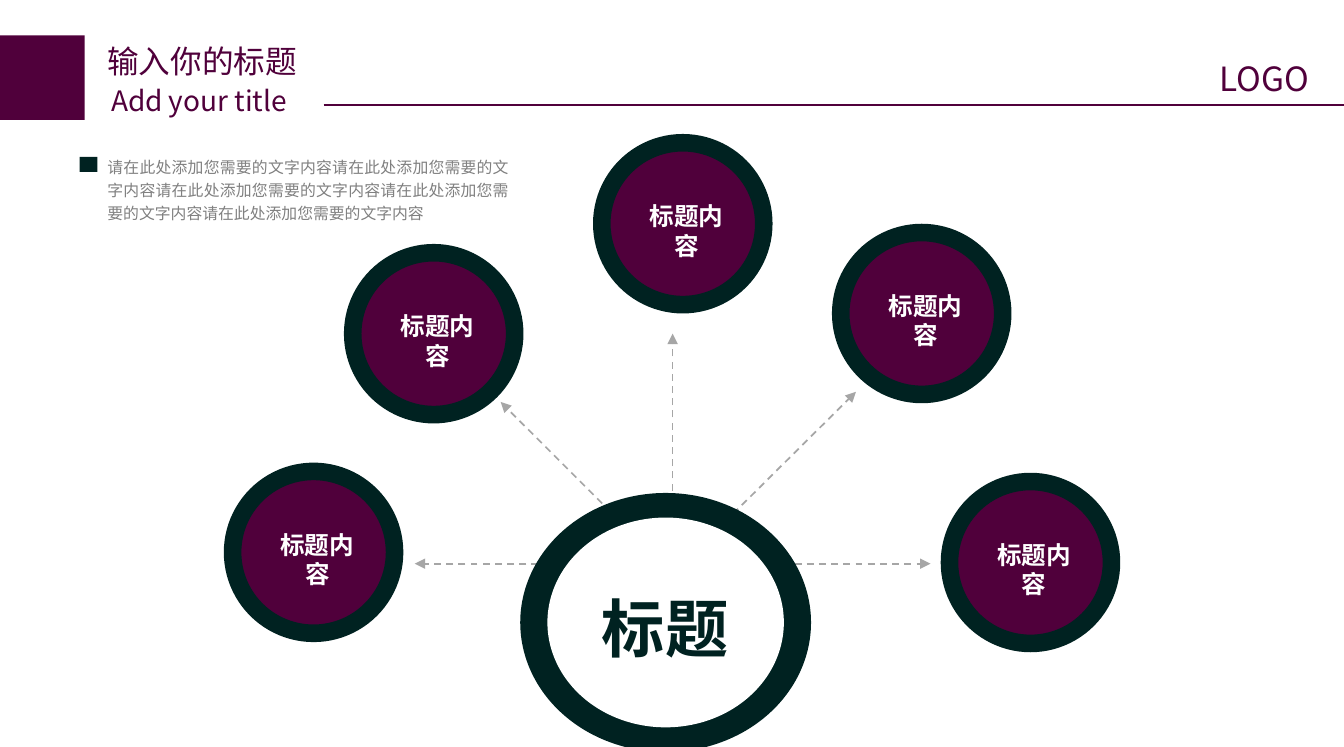
"""Builds a title slide with a hub whose arrows fan out to five ringed topics."""
from lxml.etree import SubElement
from pptx import Presentation
from pptx.dml.color import RGBColor
from pptx.enum.dml import MSO_LINE
from pptx.enum.shapes import MSO_CONNECTOR, MSO_SHAPE
from pptx.enum.text import MSO_AUTO_SIZE, PP_ALIGN
from pptx.oxml.ns import qn
from pptx.util import Inches, Pt

COLORS = {"plum": "50003B", "pine": "002221", "white": "FFFFFF",
          "arrow": "A6A6A6", "body": "808080"}
HEADING_FONT = "Noto Sans CJK SC"
BODY_FONT = "Arial"
WIDTH, HEIGHT = Inches(10.63), Inches(5.91)
COLUMNS, ROWS = 106.3, 59.1
RING_SIZE, RING_BAND = 14.2, 1.39
HUB_CENTER = (52.65, 49.25)
TOPICS = [(17.7, 36.6), (27.2, 19.3), (46.9, 10.6), (65.8, 17.7), (74.4, 37.4)]
ARROWS = [((53.2, 44.6), (32.8, 44.6)), ((53.2, 44.6), (73.6, 44.6)),
          ((53.2, 44.6), (53.2, 26.4)), ((52.4, 44.6), (39.6, 31.8)),
          ((53.2, 45.4), (67.7, 31))]
INTRO = "请在此处添加您需要的文字内容" * 5


def color(key):
    return RGBColor.from_string(COLORS[key])


def place(*cells):
    """Turn alternating column and row counts into slide lengths."""
    steps = (WIDTH / COLUMNS, HEIGHT / ROWS)
    return [round(cell * steps[index % 2]) for index, cell in enumerate(cells)]


def add_solid(slide, kind, box, fill):
    solid = slide.shapes.add_shape(kind, *place(*box))
    solid.shadow.inherit = False
    solid.fill.solid()
    solid.fill.fore_color.rgb = color(fill)
    solid.line.fill.background()
    return solid


def add_text(slide, box, lines, size, ink, font=HEADING_FONT, bold=False,
             align=PP_ALIGN.LEFT, insets=(0.1, 0.05), spacing=None, wrap=True):
    frame = slide.shapes.add_textbox(*place(*box)).text_frame
    frame.word_wrap = wrap
    frame.auto_size = MSO_AUTO_SIZE.SHAPE_TO_FIT_TEXT
    frame.margin_left = frame.margin_right = Inches(insets[0])
    frame.margin_top = frame.margin_bottom = Inches(insets[1])
    for index, line in enumerate(lines):
        paragraph = frame.add_paragraph() if index else frame.paragraphs[0]
        paragraph.alignment = align
        paragraph.line_spacing = spacing
        run = paragraph.add_run()
        run.text = line
        run.font.size = Pt(size)
        run.font.bold = bold
        run.font.color.rgb = color(ink)
        run.font.name = font
        SubElement(run.font._element, qn("a:ea"), typeface=font)


def add_line(slide, start, end, ink, weight):
    line = slide.shapes.add_connector(MSO_CONNECTOR.STRAIGHT, *place(*start, *end))
    line.line.color.rgb = color(ink)
    line.line.width = Pt(weight)
    SubElement(line._element.spPr, qn("a:effectLst"))
    return line


def add_arrow(slide, start, end):
    arrow = add_line(slide, start, end, "arrow", 1)
    arrow.line.dash_style = MSO_LINE.DASH
    SubElement(arrow.line._get_or_add_ln(), qn("a:tailEnd"), type="triangle")


def add_centered_oval(slide, center, width, height, fill):
    box = (center[0] - width / 2, center[1] - height / 2, width, height)
    add_solid(slide, MSO_SHAPE.OVAL, box, fill)


def add_topic(slide, left, top):
    add_solid(slide, MSO_SHAPE.OVAL, (left + 0.8, top + 1.2, 12.9, 11.7), "plum")
    ring = add_solid(slide, MSO_SHAPE.DONUT, (left, top, RING_SIZE, RING_SIZE), "pine")
    ring.adjustments[0] = RING_BAND / RING_SIZE
    add_text(slide, (left + 2.2, top + 4.7, 10.4, 5.9), ["标题内", "容"], 14, "white",
             bold=True, align=PP_ALIGN.CENTER, insets=(0.12, 0.06))


def add_header(slide):
    add_solid(slide, MSO_SHAPE.RECTANGLE, (0, 2.8, 6.7, 6.7), "plum")
    add_text(slide, (7.5, 2.8, 17.3, 4), ["输入你的标题"], 18, "plum")
    add_text(slide, (7.8, 6.1, 17.3, 3.7), ["Add your title"], 16, "plum")
    add_line(slide, (25.6, 8.3), (COLUMNS, 8.3), "plum", 0.75)
    add_text(slide, (95.5, 4.1, 9.6, 4.2), ["LOGO"], 19, "plum", wrap=False)


def add_intro(slide):
    add_solid(slide, MSO_SHAPE.RECTANGLE, (6.3, 12.4, 1.4, 1.2), "pine")
    add_text(slide, (8.5, 12.2, 31.7, 5.4), [INTRO], 9, "body", font=BODY_FONT,
             align=PP_ALIGN.JUSTIFY, insets=(0, 0), spacing=Pt(13))


def add_hub(slide):
    add_centered_oval(slide, HUB_CENTER, 23, 20.5, "pine")
    add_centered_oval(slide, HUB_CENTER, 18.7, 16.6, "white")
    add_text(slide, (45.7, 46.1, 13.8, 7), ["标题"], 36, "pine", bold=True,
             align=PP_ALIGN.CENTER)


def main():
    deck = Presentation()
    deck.slide_width, deck.slide_height = WIDTH, HEIGHT
    slide = deck.slides.add_slide(deck.slide_layouts[6])
    add_header(slide)
    for start, end in ARROWS:
        add_arrow(slide, start, end)
    add_hub(slide)
    add_intro(slide)
    for left, top in TOPICS:
        add_topic(slide, left, top)
    deck.save("out.pptx")


if __name__ == "__main__":
    main()
